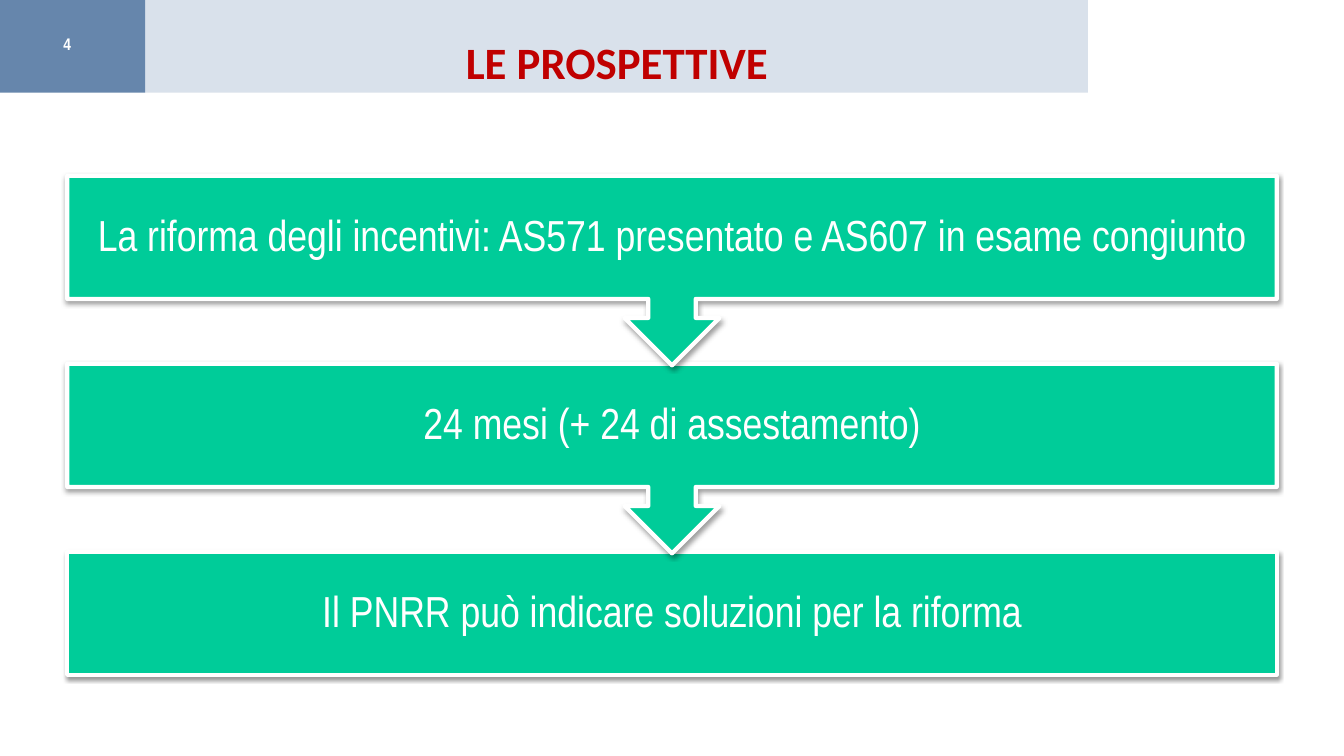
from lxml.etree import SubElement
from pptx import Presentation
from pptx.dml.color import RGBColor
from pptx.enum.shapes import MSO_SHAPE
from pptx.enum.text import MSO_ANCHOR, PP_ALIGN
from pptx.oxml.ns import qn
from pptx.util import Inches, Pt

WIDTH, HEIGHT = Inches(13.33), Inches(7.5)
WHITE = RGBColor(0xFF, 0xFF, 0xFF)
RED = RGBColor(0xC0, 0x00, 0x00)
GREEN = RGBColor(0x00, 0xCC, 0x99)
STEEL = RGBColor(0x66, 0x86, 0xAC)
PALE = RGBColor(0xD9, 0xE1, 0xEB)

HEADER_HEIGHT = 12.27
NUMBER_WIDTH = 10.8
STEP_LEFT, STEP_WIDTH = 5, 90
STEP_TOP, STEP_PITCH = 23.25, 24.87
STEP_HEIGHT, CALLOUT_HEIGHT = 16.27, 25.07
STEPS = (
    "La riforma degli incentivi: AS571 presentato e AS607 in esame congiunto",
    "24 mesi (+ 24 di assestamento)",
    "Il PNRR può indicare soluzioni per la riforma",
)


def place(left, top, width, height):
    return (round(WIDTH * left / 100), round(HEIGHT * top / 100),
            round(WIDTH * width / 100), round(HEIGHT * height / 100))


def add_block(page, kind, area, color):
    block = page.shapes.add_shape(kind, *place(*area))
    block.shadow.inherit = False
    block.fill.solid()
    block.fill.fore_color.rgb = color
    block.line.fill.background()
    return block


def add_outline_and_shadow(block):
    block.line.color.rgb = WHITE
    block.line.width = Pt(3)
    effects = block.element.spPr.find(qn("a:effectLst"))
    shadow = SubElement(effects, qn("a:outerShdw"), blurRad=str(Pt(3.1)),
                        dist=str(Pt(1.6)), dir="5400000", rotWithShape="0")
    color = SubElement(shadow, qn("a:srgbClr"), val="000000")
    SubElement(color, qn("a:alpha"), val="38000")


def add_text(page, text, area, font, size, color, inset, bold=False):
    box = page.shapes.add_textbox(*place(*area))
    frame = box.text_frame
    frame.word_wrap = True
    frame.margin_left = frame.margin_right = Inches(inset[0])
    frame.margin_top = frame.margin_bottom = Inches(inset[1])
    frame.text = text
    para = frame.paragraphs[0]
    para.alignment = PP_ALIGN.CENTER
    span = para.runs[0]
    span.font.name = font
    span.font.size = Pt(size)
    span.font.bold = bold
    span.font.color.rgb = color
    return frame


def add_header(page):
    add_block(page, MSO_SHAPE.RECTANGLE, (NUMBER_WIDTH, 0, 70.14, HEADER_HEIGHT), PALE)
    add_block(page, MSO_SHAPE.RECTANGLE, (0, 0, NUMBER_WIDTH, HEADER_HEIGHT), STEEL)
    add_text(page, "4", (0, 4, 10, 3.6), "Arial Narrow", 12, WHITE, (0.07, 0.03), True)
    add_text(page, "LE PROSPETTIVE", (16.88, 4, 58.06, 6.67),
             "Calibri", 32, RED, (0.09, 0.04), True)


def add_step(page, index, text):
    top = STEP_TOP + index * STEP_PITCH
    area = (STEP_LEFT, top, STEP_WIDTH, STEP_HEIGHT)
    if index == len(STEPS) - 1:
        block = add_block(page, MSO_SHAPE.RECTANGLE, area, GREEN)
    else:
        block = add_block(page, MSO_SHAPE.UP_ARROW_CALLOUT,
                          (STEP_LEFT, top, STEP_WIDTH, CALLOUT_HEIGHT), GREEN)
        block.rotation = 180
    add_outline_and_shadow(block)
    frame = add_text(page, text, area, "Arial Narrow", 31, WHITE, (0.24, 0.24))
    frame.vertical_anchor = MSO_ANCHOR.MIDDLE
    frame.paragraphs[0].line_spacing = 0.9


def main():
    deck = Presentation()
    deck.slide_width, deck.slide_height = WIDTH, HEIGHT
    page = deck.slides.add_slide(deck.slide_layouts[6])
    add_header(page)
    for index, text in reversed(list(enumerate(STEPS))):
        add_step(page, index, text)
    deck.save("out.pptx")


if __name__ == "__main__":
    main()
